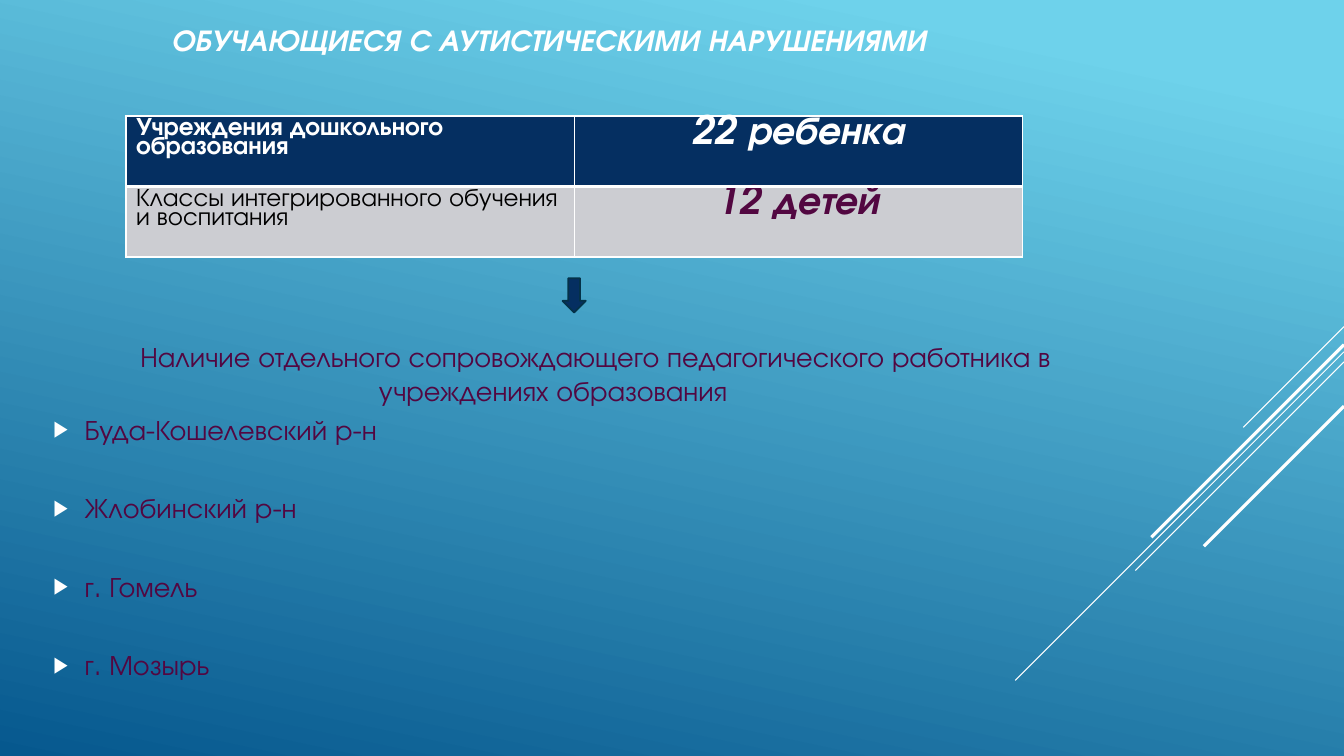
import pptx
import pptx.dml.color
import pptx.enum.shapes
import pptx.enum.text
import pptx.oxml
import pptx.oxml.ns
import pptx.util
from lxml import etree

Inches = pptx.util.Inches
Pt = pptx.util.Pt
ALIGN = pptx.enum.text.PP_ALIGN
ANCHOR = pptx.enum.text.MSO_ANCHOR

FONT = "TeX Gyre Adventor"
COLORS = {
    "sky": "6ED2EB",
    "deep": "06588E",
    "white": "FFFFFF",
    "black": "000000",
    "navy": "052F61",
    "arrow_edge": "043148",
    "grey": "CCCDD2",
    "plum": "520741",
}
DISTRICTS = ["Буда-Кошелевский р-н", "Жлобинский р-н", "г. Гомель", "г. Мозырь"]
COUNTS = [
    ("Учреждения дошкольного образования", "22 ребенка"),
    ("Классы интегрированного обучения и воспитания", "12 детей"),
]


def rgb(name):
    return pptx.dml.color.RGBColor.from_string(COLORS[name])


def add_run(paragraph, text, size, color, bold=False, italic=False):
    run = paragraph.add_run()
    run.text = text
    font = run.font
    font.name, font.size = FONT, Pt(size)
    font.bold, font.italic = bold, italic
    font.color.rgb = rgb(color)


def place(shape, left, top, width, height):
    shape.left, shape.top = Inches(left), Inches(top)
    shape.width, shape.height = Inches(width), Inches(height)


def add_element(parent, tag, **attributes):
    element = etree.SubElement(parent, pptx.oxml.ns.qn(tag))
    for key, value in attributes.items():
        element.set(key, str(value))
    return element


def set_background(slide):
    fill = slide.background.fill
    fill.gradient()
    fill.gradient_angle = 258
    for stop, position, color in zip(fill.gradient_stops, (0.1, 1), ("sky", "deep")):
        stop.position = position
        stop.color.rgb = rgb(color)


def add_diagonals(slide, right):
    # Each line runs down to the left at 45 degrees from the right edge
    for top, reach, weight in [(3.24, 1, 0.75), (3.49, 3.26, 0.75), (3.59, 2.07, 0.75),
                               (3.42, 1.91, 2.25), (4.03, 1.39, 2.25)]:
        diagonal = slide.shapes.add_connector(
            pptx.enum.shapes.MSO_CONNECTOR.STRAIGHT,
            Inches(right), Inches(top), Inches(right - reach), Inches(top + reach))
        diagonal.line.color.rgb = rgb("white")
        diagonal.line.width = Pt(weight)
        add_element(diagonal._element.spPr, "a:effectLst")


def fill_title(slide, left, top, width, height):
    heading = slide.shapes.title
    place(heading, left, top, width, height)
    frame = heading.text_frame
    frame.auto_size = pptx.enum.text.MSO_AUTO_SIZE.NONE
    frame.vertical_anchor = ANCHOR.MIDDLE
    paragraph = frame.paragraphs[0]
    paragraph.alignment = ALIGN.CENTER
    add_run(paragraph, "ОБУЧАЮЩИЕСЯ С АУТИСТИЧЕСКИМИ НАРУШЕНИЯМИ", 21.6, "white", True, True)


def add_border(cell, side, weight):
    line = add_element(cell._tc.get_or_add_tcPr(), "a:ln" + side, w=Pt(weight))
    add_element(add_element(line, "a:solidFill"), "a:srgbClr", val=COLORS["white"])


def add_counts_table(slide, left, top, width, height):
    counts = slide.shapes.add_table(
        2, 2, Inches(left), Inches(top), Inches(width), Inches(height)).table
    for row, texts in enumerate(COUNTS):
        header = row == 0
        weights = {"L": 1, "R": 1, "T": 1 if header else 3, "B": 3 if header else 1}
        for column, text in enumerate(texts):
            cell = counts.cell(row, column)
            for side, weight in weights.items():
                add_border(cell, side, weight)
            cell.fill.solid()
            cell.fill.fore_color.rgb = rgb("navy" if header else "grey")
            paragraph = cell.text_frame.paragraphs[0]
            paragraph.line_spacing = 0.8
            if column == 0:
                add_run(paragraph, text, 18, "white" if header else "black", header)
            else:
                paragraph.alignment = ALIGN.CENTER
                add_run(paragraph, text, 28, "white" if header else "plum", True, True)


def add_down_arrow(slide, left, top, width, height):
    arrow = slide.shapes.add_shape(
        pptx.enum.shapes.MSO_SHAPE.DOWN_ARROW,
        Inches(left), Inches(top), Inches(width), Inches(height))
    arrow.shadow.inherit = False
    arrow.fill.solid()
    arrow.fill.fore_color.rgb = rgb("navy")
    arrow.line.color.rgb = rgb("arrow_edge")
    arrow.line.width = Pt(1.25)


def fill_districts(slide, left, top, width, height):
    body = slide.placeholders[1]
    place(body, left, top, width, height)
    frame = body.text_frame
    frame.auto_size = pptx.enum.text.MSO_AUTO_SIZE.NONE
    frame.vertical_anchor = ANCHOR.TOP

    # Lead sentence, its first line pushed to the right
    lead = frame.paragraphs[0]
    lead.alignment = ALIGN.CENTER
    lead.space_before = Pt(0)
    properties = lead._p.get_or_add_pPr()
    properties.set("marL", "0")
    properties.set("indent", str(Inches(0.84)))
    add_element(properties, "a:buNone")
    add_run(lead, "Наличие отдельного сопровождающего педагогического работника "
                  "в учреждениях образования", 20, "plum")

    # Districts, one empty line's height apart
    for number, district in enumerate(DISTRICTS):
        paragraph = frame.add_paragraph()
        paragraph.alignment = ALIGN.LEFT
        paragraph.space_before = Pt(32 if number else 4)
        properties = paragraph._p.get_or_add_pPr()
        properties.set("marL", str(Inches(0.31)))
        properties.set("indent", str(Inches(-0.31)))
        add_element(add_element(properties, "a:buClr"), "a:srgbClr", val=COLORS["white"])
        add_element(properties, "a:buSzPct", val=80000)
        add_element(properties, "a:buChar", char="▶")
        add_run(paragraph, district, 20, "plum")


def main():
    deck = pptx.Presentation()
    deck.slide_width, deck.slide_height = Inches(13.33), Inches(7.5)
    slide = deck.slides.add_slide(deck.slide_layouts[1])
    set_background(slide)
    add_diagonals(slide, 13.33)
    fill_title(slide, 0.74, 0.16, 9.4, 0.46)
    fill_districts(slide, 0.43, 3.32, 10.11, 3.85)
    add_counts_table(slide, 1.25, 1.15, 8.89, 1.4)
    add_down_arrow(slide, 5.58, 2.76, 0.23, 0.34)
    deck.save("out.pptx")


if __name__ == "__main__":
    main()
